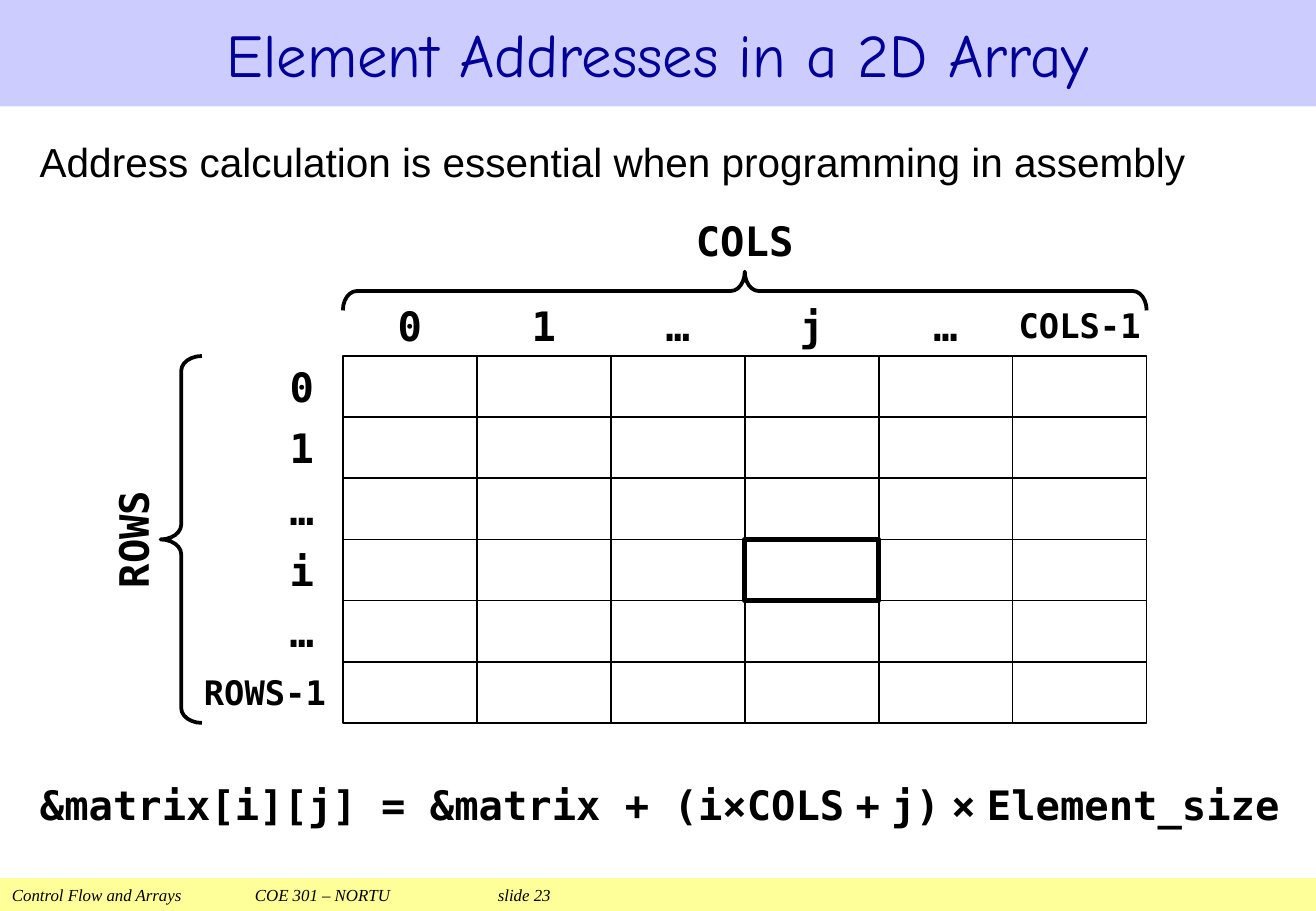
from lxml.etree import SubElement
from pptx import Presentation
from pptx.dml.color import RGBColor
from pptx.enum.shapes import MSO_SHAPE
from pptx.enum.text import MSO_ANCHOR, MSO_AUTO_SIZE, PP_ALIGN
from pptx.oxml.ns import qn
from pptx.util import Pt

BLACK = RGBColor(0x00, 0x00, 0x00)
WHITE = RGBColor(0xFF, 0xFF, 0xFF)
NAVY = RGBColor(0x00, 0x00, 0x99)
LAVENDER = RGBColor(0xCC, 0xCC, 0xFF)
YELLOW = RGBColor(0xFF, 0xFF, 0x99)
MONO = "DejaVu Sans Mono"
SLIDE_W, SLIDE_H = 780, 540

COLUMN_LABELS = ["0", "1", "…", "j", "…", "COLS-1"]
ROW_LABELS = ["0", "1", "…", "i", "…", "ROWS-1"]
FORMULA_PARTS = ["&matrix[i][j] = &matrix + (i×COLS", "+", "j)", "×", "Element_size"]


def place(shape, left, top, width, height):
    shape.left, shape.top = Pt(left), Pt(top)
    shape.width, shape.height = Pt(width), Pt(height)


def style(paragraph, size, font=MONO, color=BLACK, bold=False, align=PP_ALIGN.LEFT):
    paragraph.alignment = align
    paragraph.font.size = Pt(size)
    paragraph.font.name = font
    paragraph.font.bold = bold
    paragraph.font.color.rgb = color


def add_box(slide, box, fill=WHITE, line_width=0, kind=MSO_SHAPE.RECTANGLE):
    shape = slide.shapes.add_shape(kind, *map(Pt, box))
    shape.shadow.inherit = False
    if fill is None:
        shape.fill.background()
    else:
        shape.fill.solid()
        shape.fill.fore_color.rgb = fill
    if line_width:
        shape.line.color.rgb = BLACK
        shape.line.width = Pt(line_width)
    else:
        shape.line.fill.background()
    return shape


def add_label(slide, box, text, align=PP_ALIGN.CENTER, anchor=MSO_ANCHOR.MIDDLE):
    label = add_box(slide, box)
    frame = label.text_frame
    frame.text = text
    frame.word_wrap = True
    frame.vertical_anchor = anchor
    is_last_index = text.endswith("-1")
    if is_last_index:
        frame.margin_left = frame.margin_right = 0
    style(frame.paragraphs[0], 20 if is_last_index else 24, bold=True, align=align)
    return label


def add_brace(slide, box, upward=False):
    left, top, width, height = box
    if upward:  # swap the sides around the same centre, then turn
        left, top = left + (width - height) / 2, top + (height - width) / 2
        width, height = height, width
    brace = add_box(slide, (left, top, width, height), None, 2.25, MSO_SHAPE.LEFT_BRACE)
    brace.adjustments[0] = 0.36
    brace.rotation = 90 if upward else 0


def add_title(slide, box):
    title = slide.shapes.title
    place(title, *box)
    title.fill.solid()
    title.fill.fore_color.rgb = LAVENDER
    frame = title.text_frame
    frame.text = "Element Addresses in a 2D Array"
    frame.auto_size = MSO_AUTO_SIZE.NONE
    frame.vertical_anchor = MSO_ANCHOR.MIDDLE
    style(frame.paragraphs[0], 36, "Comic Neue", NAVY, align=PP_ALIGN.CENTER)


def add_intro(slide, box):
    frame = slide.shapes.add_textbox(*map(Pt, box)).text_frame
    frame.text = "Address calculation is essential when programming in assembly"
    frame.word_wrap = True
    frame.vertical_anchor = MSO_ANCHOR.MIDDLE
    style(frame.paragraphs[0], 24, "Arial")


def add_formula(slide, box):
    formula = slide.placeholders[1]
    place(formula, *box)
    frame = formula.text_frame
    frame.auto_size = MSO_AUTO_SIZE.NONE
    frame.vertical_anchor = MSO_ANCHOR.MIDDLE
    paragraph = frame.paragraphs[0]
    paragraph.space_before = Pt(0)
    properties = paragraph._p.get_or_add_pPr()
    properties.set("marL", "0")
    properties.set("indent", "0")
    SubElement(properties, qn("a:buNone"))
    style(paragraph, 24, bold=True)
    for index, part in enumerate(FORMULA_PARTS):
        if index:  # narrow space between the later terms
            space = paragraph.add_run()
            space.text = " "
            space.font.name = "Arial"
        paragraph.add_run().text = part


def add_array(slide, box):
    left, top, width, height = box
    cell_w, cell_h = width / len(COLUMN_LABELS), height / len(ROW_LABELS)
    label_w = 73.5
    label_left = left - 10 - label_w

    # Row and column indices
    for row, text in enumerate(ROW_LABELS):
        add_label(slide, (label_left, top + row * cell_h, label_w, cell_h),
                  text, PP_ALIGN.RIGHT)
    for column, text in enumerate(COLUMN_LABELS):
        add_label(slide, (left + column * cell_w, top - cell_h, cell_w, cell_h), text)

    # Cells, with element [i][j] drawn last so its frame stays on top
    element = (ROW_LABELS.index("i"), COLUMN_LABELS.index("j"))
    cells = [(row, column) for row in range(len(ROW_LABELS))
             for column in range(len(COLUMN_LABELS))]
    for row, column in sorted(cells, key=lambda cell: cell == element):
        add_box(slide, (left + column * cell_w, top + row * cell_h, cell_w, cell_h),
                line_width=3 if (row, column) == element else 1)

    # Dimensions and their braces
    add_label(slide, (left, top - 86.4, width, 47.5), "COLS", anchor=MSO_ANCHOR.TOP)
    rows = add_label(slide, (label_left - 59, top, 59, height), "ROWS",
                     anchor=MSO_ANCHOR.TOP)
    rows.text_frame._txBody.bodyPr.set("vert", "vert270")
    add_brace(slide, (label_left - 24.5, top, 24.5, height))
    add_brace(slide, (left, top - 50, width, 23), upward=True)


def add_footer(slide, box):
    frame = add_box(slide, box, YELLOW).text_frame
    frame.text = "Control Flow and Arrays\tCOE 301 – NORTU\tslide 23"
    frame.vertical_anchor = MSO_ANCHOR.MIDDLE
    frame.margin_top = frame.margin_bottom = 0
    paragraph = frame.paragraphs[0]
    tabs = SubElement(paragraph._p.get_or_add_pPr(), qn("a:tabLst"))
    for position in (144, 288):
        SubElement(tabs, qn("a:tab"), pos=str(Pt(position)), algn="l")
    style(paragraph, 10, "Times New Roman")
    paragraph.font.italic = True


def main():
    deck = Presentation()
    deck.slide_width, deck.slide_height = Pt(SLIDE_W), Pt(SLIDE_H)
    slide = deck.slides.add_slide(deck.slide_layouts[1])
    add_footer(slide, (0, 520.5, SLIDE_W, 19.5))
    add_title(slide, (0, 0, SLIDE_W, 63))
    add_intro(slide, (16.5, 75, 762, 41))
    add_array(slide, (203.2, 211, 476.4, 217.5))
    add_formula(slide, (16.5, 456, 752, 41))
    deck.save("out.pptx")


if __name__ == "__main__":
    main()
